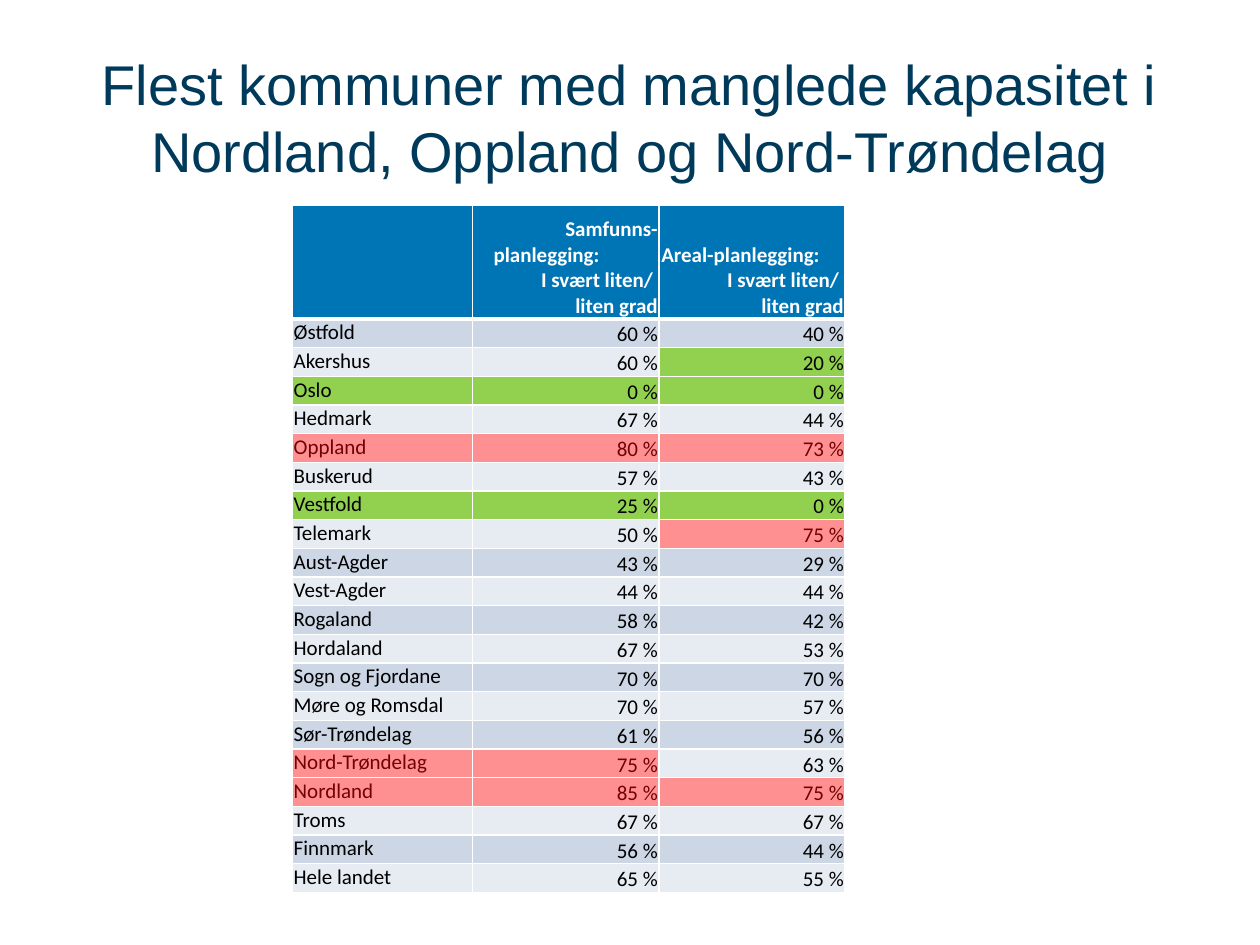
from lxml.etree import SubElement
from pptx import Presentation
from pptx.dml.color import RGBColor
from pptx.enum.text import MSO_ANCHOR as Anchor, PP_ALIGN as Align
from pptx.oxml.ns import qn
from pptx.util import Cm, Pt

COLORS = {
    "title": "003A5B",
    "header": "0075B6",
    "white": "FFFFFF",
    "black": "000000",
    "band_dark": "CCD6E5",
    "band_light": "E7ECF3",
    "good": "92D050",
    "bad": "FE9091",
    "bad_text": "720103",
}

TITLE = "Flest kommuner med manglede kapasitet i Nordland, Oppland og Nord-Trøndelag"

# Header paragraphs: text, alignment, left indent in cm
GRADE = ("I svært liten/ \vliten grad", Align.RIGHT, 0)
HEADERS = [
    [],
    [("Samfunns-", Align.RIGHT, 0), ("planlegging:", Align.LEFT, 0.4), GRADE],
    [("Areal-planlegging:", Align.LEFT, 0.03), GRADE],
]

# County, two percentages, and a mark per cell: g = good, b = bad, - = banded
COUNTIES = [
    ("Østfold", 60, 40, "---"),
    ("Akershus", 60, 20, "--g"),
    ("Oslo", 0, 0, "ggg"),
    ("Hedmark", 67, 44, "---"),
    ("Oppland", 80, 73, "bbb"),
    ("Buskerud", 57, 43, "---"),
    ("Vestfold", 25, 0, "ggg"),
    ("Telemark", 50, 75, "--b"),
    ("Aust-Agder", 43, 29, "---"),
    ("Vest-Agder", 44, 44, "---"),
    ("Rogaland", 58, 42, "---"),
    ("Hordaland", 67, 53, "---"),
    ("Sogn og Fjordane", 70, 70, "---"),
    ("Møre og Romsdal", 70, 57, "---"),
    ("Sør-Trøndelag", 61, 56, "---"),
    ("Nord-Trøndelag", 75, 63, "bb-"),
    ("Nordland", 85, 75, "bbb"),
    ("Troms", 67, 67, "---"),
    ("Finnmark", 56, 44, "---"),
    ("Hele landet", 65, 55, "---"),
]


def rgb(name):
    return RGBColor.from_string(COLORS[name])


def style_font(font, name, size, color, bold=False):
    font.name = name
    font.size = Pt(size)
    font.bold = bold
    font.color.rgb = rgb(color)


def add_title(slide, left, top, width, height):
    text_frame = slide.shapes.add_textbox(left, top, width, height).text_frame
    text_frame.word_wrap = True
    text_frame.vertical_anchor = Anchor.MIDDLE
    text_frame.text = TITLE
    paragraph = text_frame.paragraphs[0]
    paragraph.alignment = Align.CENTER
    style_font(paragraph.runs[0].font, "Arial", 32, "title")


def style_cell(cell, fill, top=1, bottom=1):
    """Set margins, white borders (widths in points) and fill."""
    cell.margin_left = cell.margin_right = cell.margin_top = Cm(0.02)
    cell.margin_bottom = 0
    properties = cell._tc.get_or_add_tcPr()
    for side, points in (("L", 1), ("R", 1), ("T", top), ("B", bottom)):
        line = SubElement(properties, qn(f"a:ln{side}"), w=str(Pt(points)))
        solid = SubElement(line, qn("a:solidFill"))
        SubElement(solid, qn("a:srgbClr"), val=COLORS["white"])
    cell.fill.solid()
    cell.fill.fore_color.rgb = rgb(fill)


def fill_header(cell, lines):
    style_cell(cell, "header", bottom=3)
    cell.vertical_anchor = Anchor.BOTTOM
    for index, (text, alignment, indent) in enumerate(lines):
        text_frame = cell.text_frame
        paragraph = text_frame.add_paragraph() if index else text_frame.paragraphs[0]
        paragraph.text = text
        paragraph.alignment = alignment
        paragraph._p.get_or_add_pPr().set("marL", str(Cm(indent)))
        for run in paragraph.runs:
            style_font(run.font, "Calibri", 12, "white", bold=True)


def fill_body(cell, text, mark, row, is_value):
    band = "band_dark" if row % 2 else "band_light"
    fill = {"g": "good", "b": "bad"}.get(mark, band)
    style_cell(cell, fill, top=3 if row == 1 else 1)
    cell.vertical_anchor = Anchor.BOTTOM if is_value else Anchor.TOP
    cell.text_frame.text = text
    paragraph = cell.text_frame.paragraphs[0]
    paragraph.alignment = Align.RIGHT if is_value else Align.LEFT
    color = "bad_text" if mark == "b" else "black"
    style_font(paragraph.runs[0].font, "Calibri", 12, color)


def add_county_table(slide, left, top, width, height):
    rows = len(COUNTIES) + 1
    table = slide.shapes.add_table(rows, 3, left, top, width, height).table

    # Column and row sizes
    value_width = Cm(3.75)
    header_height = Cm(2.3)
    table.columns[0].width = width - 2 * value_width
    table.columns[1].width = table.columns[2].width = value_width
    table.rows[0].height = header_height
    for row in range(1, rows):
        table.rows[row].height = (height - header_height) // len(COUNTIES)

    # Contents
    for column, lines in enumerate(HEADERS):
        fill_header(table.cell(0, column), lines)
    for row, (county, society, area, marks) in enumerate(COUNTIES, start=1):
        texts = (county, f"{society} %", f"{area} %")
        for column, (text, mark) in enumerate(zip(texts, marks)):
            fill_body(table.cell(row, column), text, mark, row, column > 0)


def main():
    presentation = Presentation()
    presentation.slide_width = Cm(25.4)
    presentation.slide_height = Cm(19.05)
    slide = presentation.slides.add_slide(presentation.slide_layouts[6])
    add_title(slide, Cm(1.27), Cm(0.76), Cm(22.86), Cm(3.18))
    add_county_table(slide, Cm(5.9), Cm(4.13), Cm(11.13), Cm(13.86))
    presentation.save("out.pptx")


if __name__ == "__main__":
    main()
